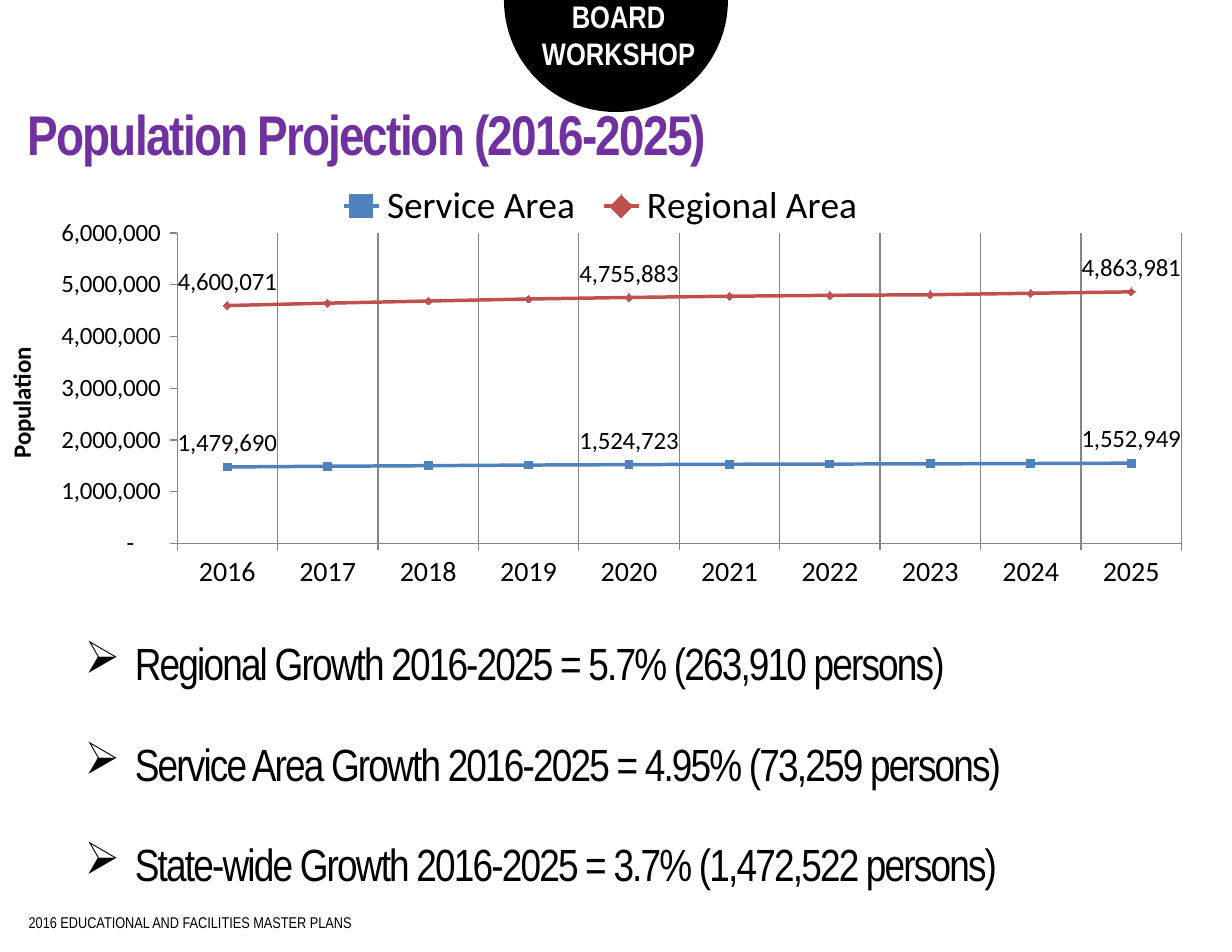
from dataclasses import dataclass

from lxml import etree
from pptx import Presentation
from pptx.chart.data import CategoryChartData
from pptx.dml.color import RGBColor
from pptx.enum.chart import (XL_CHART_TYPE, XL_LABEL_POSITION, XL_LEGEND_POSITION,
                             XL_MARKER_STYLE, XL_TICK_MARK)
from pptx.enum.shapes import MSO_SHAPE
from pptx.enum.text import PP_ALIGN
from pptx.oxml import parse_xml
from pptx.oxml.ns import nsdecls, qn
from pptx.util import Cm, Pt

BLACK = RGBColor(0x00, 0x00, 0x00)
WHITE = RGBColor(0xFF, 0xFF, 0xFF)
PURPLE = RGBColor(0x70, 0x30, 0xA0)
BLUE = RGBColor(0x4F, 0x81, 0xBD)
RED = RGBColor(0xC0, 0x50, 0x4D)
GRAY = RGBColor(0x86, 0x86, 0x86)
TEXT_FONT = "Arial Narrow"
CHART_FONT = "Calibri"
LINE_SPACING = Pt(32.3)
LABELLED_POINTS = (0, 4, 9)


@dataclass
class Box:
    left: float
    top: float
    width: float
    height: float

    def lengths(self) -> tuple:
        return Cm(self.left), Cm(self.top), Cm(self.width), Cm(self.height)


@dataclass
class Population:
    name: str
    color: RGBColor
    marker: XL_MARKER_STYLE
    values: tuple


POPULATIONS = (
    Population("Service Area", BLUE, XL_MARKER_STYLE.SQUARE,
               (1479690, 1493102, 1504657, 1515994, 1524723,
                1531309, 1535906, 1538991, 1545954, 1552949)),
    Population("Regional Area", RED, XL_MARKER_STYLE.DIAMOND,
               (4600071, 4645931, 4686665, 4725453, 4755883,
                4779217, 4796289, 4808452, 4836132, 4863981)),
)
GROWTH_LINES = (
    "Regional Growth 2016-2025 = 5.7% (263,910 persons)",
    "Service Area Growth 2016-2025 = 4.95% (73,259 persons)",
    "State-wide Growth 2016-2025 = 3.7% (1,472,522 persons)",
)


def add_bullet(paragraph, indent: Cm) -> None:
    properties = paragraph._p.get_or_add_pPr()
    properties.set("marL", str(indent))
    properties.set("indent", str(-indent))
    etree.SubElement(properties, qn("a:buChar"), char="➢")


def add_text(slide, box: Box, lines: tuple, *, size: float, color: RGBColor = BLACK,
             bold: bool = False, align=PP_ALIGN.LEFT, wrap: bool = True,
             line_spacing=None, gap=None, tracking: int = 0,
             bullet_indent=None, inset: float = 0.11) -> None:
    """Tracking is in hundredths of a point; gap is the space between paragraphs."""
    frame = slide.shapes.add_textbox(*box.lengths()).text_frame
    frame.word_wrap = wrap
    frame.margin_top = frame.margin_bottom = Cm(inset)
    frame.margin_left = frame.margin_right = Cm(2 * inset)
    for index, line in enumerate(lines):
        paragraph = frame.paragraphs[0] if index == 0 else frame.add_paragraph()
        if bullet_indent:
            add_bullet(paragraph, bullet_indent)
        paragraph.alignment = align
        if line_spacing:
            paragraph.line_spacing = line_spacing
        if gap and index:
            paragraph.space_before = gap
        run = paragraph.add_run()
        run.text = line
        run.font.name = TEXT_FONT
        run.font.size = Pt(size)
        run.font.bold = bold
        run.font.color.rgb = color
        if tracking:
            run._r.get_or_add_rPr().set("spc", str(tracking))


def format_font(font, size: float, bold: bool = False) -> None:
    font.name = CHART_FONT
    font.size = Pt(size)
    font.bold = bold
    font.color.rgb = BLACK


def set_layout(element, left: float, top: float, width: float, height: float,
               inner: bool = False) -> None:
    """Place a plot area or legend by fractions of the chart."""
    for old_layout in element.findall(qn("c:layout")):
        element.remove(old_layout)
    target = '<c:layoutTarget val="inner"/>' if inner else ""
    layout = parse_xml(
        f'<c:layout {nsdecls("c")}><c:manualLayout>{target}'
        '<c:xMode val="edge"/><c:yMode val="edge"/>'
        f'<c:x val="{left}"/><c:y val="{top}"/><c:w val="{width}"/><c:h val="{height}"/>'
        '</c:manualLayout></c:layout>')
    element.insert(0 if inner else 1, layout)


def format_axis(axis, size: float) -> None:
    axis.major_tick_mark = XL_TICK_MARK.OUTSIDE
    axis.minor_tick_mark = XL_TICK_MARK.NONE
    axis.format.line.color.rgb = GRAY
    axis.format.line.width = Pt(0.75)
    format_font(axis.tick_labels.font, size)


def format_series(series, population: Population) -> None:
    series.smooth = False
    series.format.line.color.rgb = population.color
    series.format.line.width = Pt(2.25)
    series.marker.style = population.marker
    series.marker.size = 5
    series.marker.format.fill.solid()
    series.marker.format.fill.fore_color.rgb = population.color
    series.marker.format.line.color.rgb = population.color
    series.data_labels.show_value = False
    for index in LABELLED_POINTS:
        label = series.points[index].data_label
        format_font(label.font, 16)
        label.position = XL_LABEL_POSITION.ABOVE


def add_population_chart(slide, box: Box) -> None:
    data = CategoryChartData(number_format="#,##0")
    data.categories = [str(year) for year in range(2016, 2026)]
    for population in POPULATIONS:
        data.add_series(population.name, population.values)
    chart = slide.shapes.add_chart(XL_CHART_TYPE.LINE_MARKERS, *box.lengths(), data).chart
    chart.has_title = False
    format_font(chart.font, 10)
    chart.plots[0].vary_by_categories = False
    for series, population in zip(chart.plots[0].series, POPULATIONS):
        format_series(series, population)

    years = chart.category_axis
    format_axis(years, 18)
    years.has_major_gridlines = True
    years.major_gridlines.format.line.color.rgb = GRAY
    years.major_gridlines.format.line.width = Pt(0.75)

    persons = chart.value_axis
    format_axis(persons, 16)
    persons.has_major_gridlines = False
    persons.minimum_scale, persons.maximum_scale, persons.major_unit = 0, 6000000, 1000000
    persons.tick_labels.number_format = r'_(* #,##0_);_(* \(#,##0\);_(* "-"??_);_('
    persons.tick_labels.number_format_is_linked = False
    title_frame = persons.axis_title.text_frame
    title_frame.text = "Population"
    format_font(title_frame.paragraphs[0].runs[0].font, 16, bold=True)
    title_frame._txBody.find(qn("a:bodyPr")).set("rot", "-5400000")

    chart.has_legend = True
    chart.legend.position = XL_LEGEND_POSITION.TOP
    chart.legend.include_in_layout = False
    format_font(chart.legend.font, 24)
    chart_element = chart._chartSpace.chart
    set_layout(chart_element.plotArea, 0.146, 0.134, 0.828, 0.739, inner=True)
    set_layout(chart.legend._element, 0.27, 0.01, 0.45, 0.12)


def add_badge(slide) -> None:
    circle = slide.shapes.add_shape(MSO_SHAPE.OVAL, *Box(11.43, -2.54, 5.08, 5.08).lengths())
    circle.shadow.inherit = False
    circle.fill.solid()
    circle.fill.fore_color.rgb = BLACK
    circle.line.fill.background()
    add_text(slide, Box(12.01, -0.2, 4.04, 1.96), ("BOARD", "WORKSHOP"), size=20,
             color=WHITE, bold=True, align=PP_ALIGN.CENTER, wrap=False, inset=0.13)


def main() -> None:
    presentation = Presentation()
    presentation.slide_width, presentation.slide_height = Cm(27.94), Cm(21.59)
    slide = presentation.slides.add_slide(presentation.slide_layouts[6])
    add_text(slide, Box(0.43, 20.6, 23.06, 0.66),
             ("2016 EDUCATIONAL AND FACILITIES MASTER PLANS",), size=10)
    add_badge(slide)
    add_text(slide, Box(0.41, 2.54, 27.1, 1.4), ("Population Projection (2016-2025)",),
             size=36, color=PURPLE, bold=True, line_spacing=LINE_SPACING, tracking=-120)
    add_population_chart(slide, Box(0, 4.01, 27.51, 9.53))
    add_text(slide, Box(1.7, 14.4, 24.64, 5.92), GROWTH_LINES, size=29,
             line_spacing=LINE_SPACING, gap=LINE_SPACING, tracking=-120,
             bullet_indent=Cm(1.14))
    presentation.save("out.pptx")


if __name__ == "__main__":
    main()
